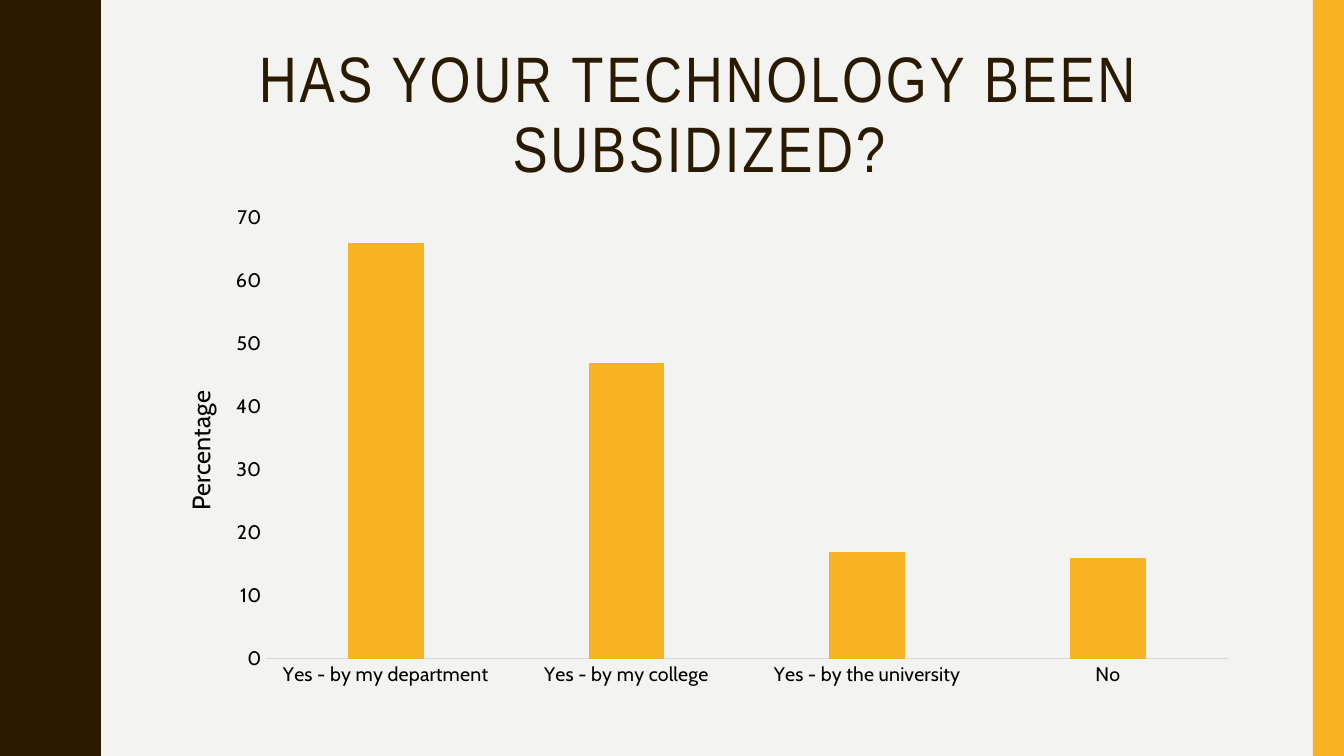
import pptx
import pptx.chart.data
import pptx.dml.color
import pptx.enum.chart
import pptx.enum.shapes
import pptx.enum.text
import pptx.oxml
import pptx.oxml.ns
import pptx.util

INCH = pptx.util.Inches(1)
WIDTH, HEIGHT = 13.33, 7.5
BROWN, AMBER, PAPER, BLACK, AXIS_GREY = "2A1A00", "F8B323", "F3F3F2", "000000", "D9D9D9"
WAVE_COUNT = 5
CREST = [(0, 0), (0, .07), (.01, .14), (.02, .2), (.03, .25), (.05, .29), (.07, .33), (.09, .38),
         (.11, .42), (.13, .46), (.15, .5), (.17, .55), (.18, .61), (.19, .68), (.19, .75)]
ANSWERS = {"Yes - by my department": 66, "Yes - by my college": 47,
           "Yes - by the university": 17, "No": 16}


def rgb(hex_value):
    """Return the colour for a hex string."""
    return pptx.dml.color.RGBColor.from_string(hex_value)


def emu(box):
    """Convert a box in inches to whole drawing units."""
    return [round(length * INCH) for length in box]


def paint(shape, colour):
    """Give a shape a plain fill without line or shadow."""
    shape.fill.solid()
    shape.fill.fore_color.rgb = rgb(colour)
    shape.line.fill.background()
    shape.shadow.inherit = False


def style(target, **values):
    """Set format values on an object."""
    for name, value in values.items():
        setattr(target, name, value)


def style_font(font, size, colour, face):
    """Set size, colour and face of a font."""
    style(font, size=pptx.util.Pt(size), name=face, bold=False)
    font.color.rgb = rgb(colour)


def set_layout(parent, successor_tags, **shares):
    """Place a chart part by shares of the chart's size."""
    for old in parent.findall(pptx.oxml.ns.qn("c:layout")):
        parent.remove(old)
    entries = "".join(f'<c:{key} val="{value}"/>' for key, value in shares.items())
    layout = pptx.oxml.parse_xml(
        f'<c:layout {pptx.oxml.ns.nsdecls("c")}><c:manualLayout>{entries}</c:manualLayout></c:layout>')
    parent.insert_element_before(layout, *successor_tags)


def add_wavy_edge(slide, box):
    """Draw the band whose right side repeats one wave."""
    left, top, width, height = box
    period = height / WAVE_COUNT
    wave = CREST + [(x, period - y) for x, y in reversed(CREST[:-1])]
    base = left + width - CREST[-1][0]
    edge = [(base + x, top + turn * period + y) for turn in range(WAVE_COUNT) for x, y in wave]
    builder = slide.shapes.build_freeform(left, top, scale=INCH)
    builder.add_line_segments(edge + [(left, top + height)], close=True)
    paint(builder.convert_to_shape(), BROWN)


def add_side_bar(slide, box):
    """Draw the plain band at the right."""
    bar = slide.shapes.add_shape(pptx.enum.shapes.MSO_SHAPE.RECTANGLE, *emu(box))
    paint(bar, AMBER)


def add_heading(slide, box):
    """Write the centred question."""
    frame = slide.shapes.add_textbox(*emu(box)).text_frame
    style(frame, word_wrap=True, vertical_anchor=pptx.enum.text.MSO_ANCHOR.TOP)
    question = frame.paragraphs[0]
    style(question, alignment=pptx.enum.text.PP_ALIGN.CENTER, line_spacing=0.9)
    words = question.add_run()
    words.text = "HAS YOUR TECHNOLOGY BEEN SUBSIDIZED?"
    style_font(words.font, 45.9, BROWN, "Arial Narrow")
    words.font._element.set("spc", "200")


def add_answer_chart(slide, box):
    """Chart the share of each answer."""
    answers = pptx.chart.data.CategoryChartData(number_format="0")
    answers.categories = list(ANSWERS)
    answers.add_series("Series 1", list(ANSWERS.values()))
    chart = slide.shapes.add_chart(
        pptx.enum.chart.XL_CHART_TYPE.COLUMN_CLUSTERED, *emu(box), answers).chart
    style(chart, has_legend=False, has_title=False)
    style_font(chart.font, 10, BLACK, "Cabin")
    bars = chart.plots[0]
    style(bars, gap_width=219, overlap=-27, vary_by_categories=False)
    bars.series[0].format.fill.solid()
    bars.series[0].format.fill.fore_color.rgb = rgb(AMBER)

    for axis in (chart.category_axis, chart.value_axis):
        style(axis, has_major_gridlines=False,
              major_tick_mark=pptx.enum.chart.XL_TICK_MARK.NONE,
              minor_tick_mark=pptx.enum.chart.XL_TICK_MARK.NONE)
        style_font(axis.tick_labels.font, 14, BLACK, "Cabin")
    baseline = chart.category_axis.format.line
    baseline.width = pptx.util.Pt(0.75)
    baseline.color.rgb = rgb(AXIS_GREY)

    percent = chart.value_axis
    style(percent, minimum_scale=0, maximum_scale=70, major_unit=10)
    style(percent.tick_labels, number_format="0", number_format_is_linked=False)
    percent.format.line.fill.background()
    caption = percent.axis_title
    caption.text_frame.text = "Percentage"
    caption.text_frame._txBody.bodyPr.set("rot", "-5400000")
    caption.text_frame._txBody.bodyPr.set("vert", "horz")
    style_font(caption.text_frame.paragraphs[0].runs[0].font, 18, BLACK, "Cabin")
    set_layout(caption._element, ("c:overlay", "c:spPr", "c:txPr"),
               xMode="edge", yMode="edge", x=0.025, y=0.38)
    set_layout(chart._chartSpace.chart.plotArea, ("c:barChart",), layoutTarget="inner",
               xMode="edge", yMode="edge", x=0.104, y=0.043, w=0.876, h=0.882)


def main():
    """Build the slide and save it."""
    deck = pptx.Presentation()
    style(deck, slide_width=round(WIDTH * INCH), slide_height=round(HEIGHT * INCH))
    slide = deck.slides.add_slide(deck.slide_layouts[6])
    slide.background.fill.solid()
    slide.background.fill.fore_color.rgb = rgb(PAPER)
    add_wavy_edge(slide, (0, 0, 0.97, HEIGHT))
    add_side_bar(slide, (WIDTH - 0.31, 0, 0.31, HEIGHT))
    add_heading(slide, (1.37, 0.42, 11.13, 0.79))
    add_answer_chart(slide, (1.5, 1.95, 10.9, 4.96))
    deck.save("out.pptx")


if __name__ == "__main__":
    main()
